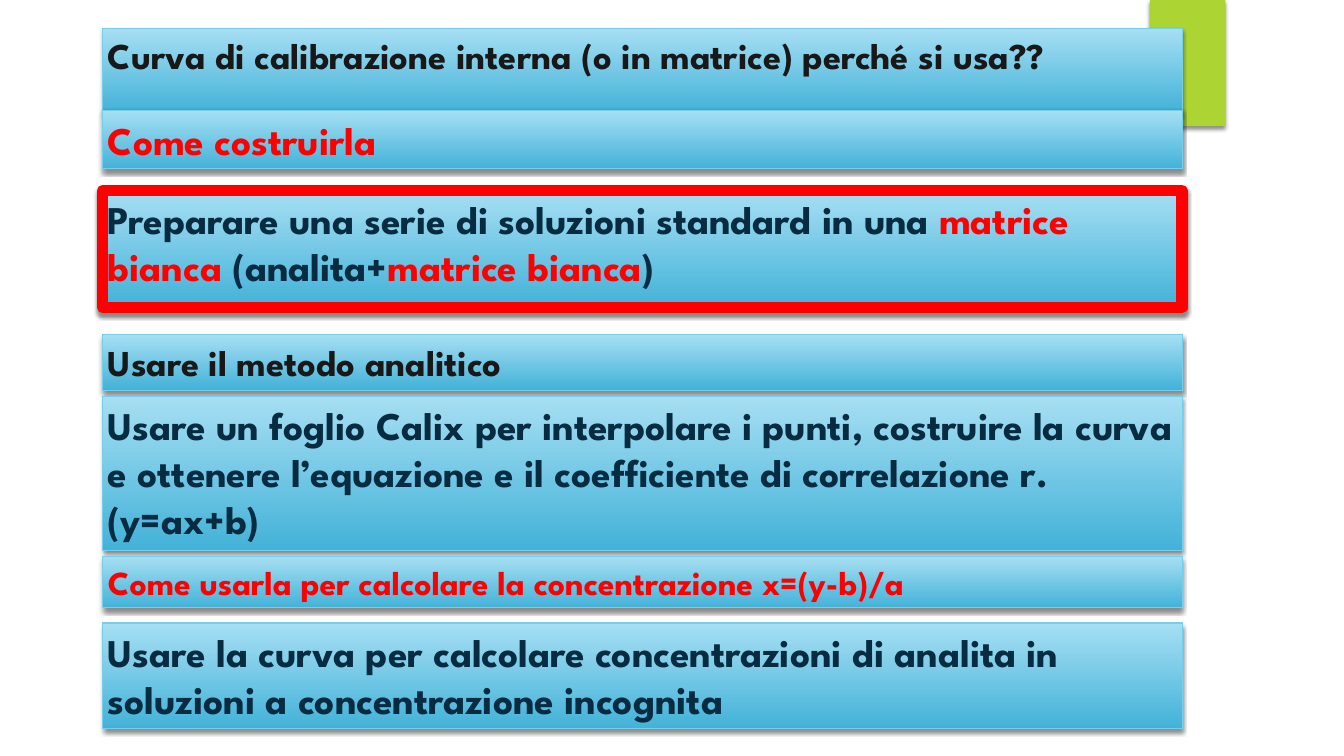
from dataclasses import dataclass

import pptx
import pptx.dml.color
import pptx.enum.shapes
import pptx.enum.text
import pptx.oxml
import pptx.oxml.ns
import pptx.util
from pptx.util import Cm


@dataclass(frozen=True)
class Theme:
    font: str = "League Spartan"
    accent: str = "ACD433"
    gradient: tuple = ("A6DFF3", "43B2D8")
    border: str = "75CEEC"
    dark: str = "181818"
    navy: str = "072B40"
    red: str = "FF0000"
    large: int = 28
    medium: int = 26
    small: int = 24
    thin: float = 0.75
    thick: float = 8


THEME = Theme()
BAR_LEFT, BAR_WIDTH = 2.59, 27.2

SHADOW = (
    f'<a:outerShdw {pptx.oxml.ns.nsdecls("a")} blurRad="38100" dist="25400" '
    'dir="5400000" rotWithShape="0"><a:srgbClr val="000000">'
    '<a:alpha val="45000"/></a:srgbClr></a:outerShdw>'
)


def rgb(value):
    return pptx.dml.color.RGBColor.from_string(value)


def add_shadow(shape):
    shape.shadow.inherit = False
    effects = shape.element.spPr.find(pptx.oxml.ns.qn("a:effectLst"))
    effects.append(pptx.oxml.parse_xml(SHADOW))


def write_text(box, text, *, size, color, highlight=None):
    """Fill a box with one paragraph; each occurrence of highlight turns red."""
    frame = box.text_frame
    frame.word_wrap = True
    frame.auto_size = pptx.enum.text.MSO_AUTO_SIZE.SHAPE_TO_FIT_TEXT
    frame.vertical_anchor = pptx.enum.text.MSO_ANCHOR.TOP
    frame.margin_left = frame.margin_right = Cm(0.13)
    frame.margin_top = frame.margin_bottom = Cm(0.13)
    para = frame.paragraphs[0]
    para.alignment = pptx.enum.text.PP_ALIGN.LEFT
    pieces = [(text, color)]
    if highlight:
        pieces = [(highlight, THEME.red)]
        before, *others = text.split(highlight)
        pieces = [(before, color)]
        for other in others:
            pieces += [(highlight, THEME.red), (other, color)]
    for piece, piece_color in pieces:
        span = para.add_run()
        span.text = piece
        span.font.name = THEME.font
        span.font.size = pptx.util.Pt(size)
        span.font.bold = True
        span.font.color.rgb = rgb(piece_color)


def format_bar(box, top, height, border=THEME.border, weight=THEME.thin):
    box.left, box.top = Cm(BAR_LEFT), Cm(top)
    box.width, box.height = Cm(BAR_WIDTH), Cm(height)
    box.fill.gradient()
    box.fill.gradient_angle = 270
    for stop, color in zip(box.fill.gradient_stops, THEME.gradient):
        stop.color.rgb = rgb(color)
    box.line.color.rgb = rgb(border)
    box.line.width = pptx.util.Pt(weight)
    add_shadow(box)


def add_bar(page, text, top, height, *, size=THEME.large, color=THEME.navy,
            highlight=None, **outline):
    box = page.shapes.add_textbox(0, 0, Cm(BAR_WIDTH), Cm(height))
    format_bar(box, top, height, **outline)
    write_text(box, text, size=size, color=color, highlight=highlight)


def add_title(page, text):
    title = page.shapes.title
    format_bar(title, 0.71, 1.4)
    write_text(title, text, size=THEME.medium, color=THEME.dark)


def add_accent(page):
    """Place the green corner tab behind the title."""
    tab = page.shapes.add_shape(pptx.enum.shapes.MSO_SHAPE.RECTANGLE,
                                Cm(28.98), 0, Cm(1.9), Cm(3.18))
    tab.fill.solid()
    tab.fill.fore_color.rgb = rgb(THEME.accent)
    tab.line.fill.background()
    add_shadow(tab)
    page.shapes.title.element.addprevious(tab.element)


def main():
    deck = pptx.Presentation()
    deck.slide_width, deck.slide_height = Cm(33.87), Cm(19.05)
    page = deck.slides.add_slide(deck.slide_layouts.get_by_name("Title Only"))

    add_accent(page)
    add_title(page, "Curva di calibrazione interna (o in matrice) perché si usa??")
    add_bar(page, "Come costruirla", 2.79, 1.47, color=THEME.red)
    add_bar(page, "Preparare una serie di soluzioni standard in una "
            "matrice bianca (analita+matrice bianca)", 4.8, 2.95,
            highlight="matrice bianca", border=THEME.red, weight=THEME.thick)
    add_bar(page, "Usare il metodo analitico", 8.43, 1.4,
            size=THEME.medium, color=THEME.dark)
    add_bar(page, "Usare un foglio Calix per interpolare i punti, costruire la "
            "curva e ottenere l’equazione e il coefficiente di correlazione r. "
            "(y=ax+b)", 9.98, 3.89)
    add_bar(page, "Come usarla per calcolare la concentrazione x=(y-b)/a",
            14.02, 1.3, size=THEME.small, color=THEME.red)
    add_bar(page, "Usare la curva per calcolare concentrazioni di analita in "
            "soluzioni a concentrazione incognita", 15.7, 2.67)
    deck.save("out.pptx")


if __name__ == "__main__":
    main()
